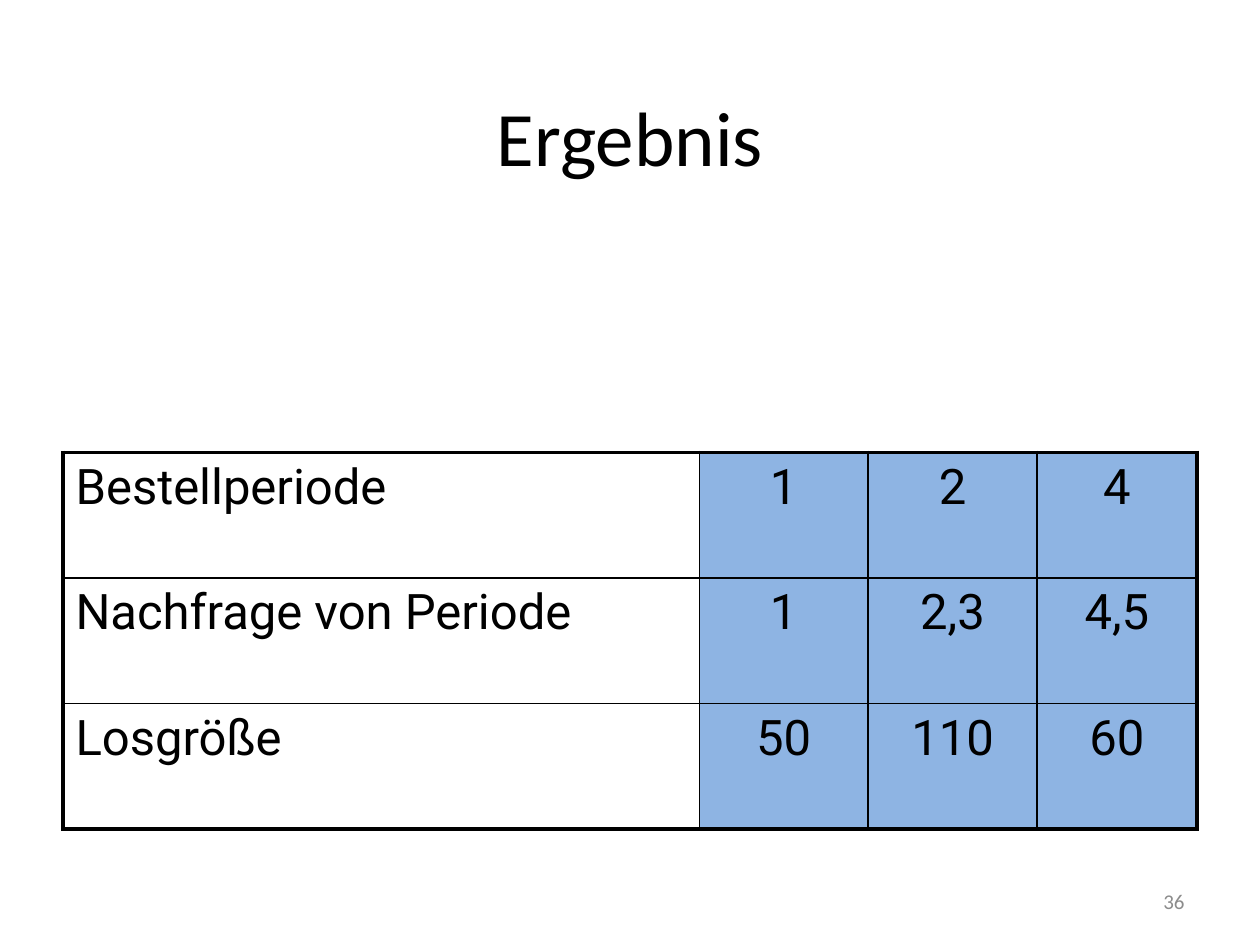
import pptx
import pptx.util
import pptx.dml.color
import pptx.enum.text
import pptx.oxml
import pptx.oxml.ns

Inches, Pt = pptx.util.Inches, pptx.util.Pt
ALIGN = pptx.enum.text.PP_ALIGN
ANCHOR = pptx.enum.text.MSO_ANCHOR

TITLE = "Ergebnis"
PAGE = "36"
ROWS = [
    ("Bestellperiode", "1", "2", "4"),
    ("Nachfrage von Periode", "1", "2,3", "4,5"),
    ("Losgröße", "50", "110", "60"),
]
COL_WIDTHS = [5.05, 1.34, 1.34, 1.27]
WIDTH, HEIGHT, MARGIN = 10, 7.5, 0.5
TABLE_TOP, TABLE_HEIGHT = 3.59, 2.99
BLACK, WHITE, BLUE, GREY = "000000", "FFFFFF", "8EB4E3", "8C8C8C"
OUTER, INNER = 2.25, 1


def rgb(value):
    return pptx.dml.color.RGBColor.from_string(value)


def write(tf, text, size, font, color, align):
    p = tf.paragraphs[0]
    p.alignment = align
    r = p.add_run()
    r.text = text
    r.font.size = Pt(size)
    r.font.name = font
    r.font.color.rgb = rgb(color)


def add_text(s, box, text, size, color, align):
    tf = s.shapes.add_textbox(*map(Inches, box)).text_frame
    tf.word_wrap = True
    tf.vertical_anchor = ANCHOR.MIDDLE
    write(tf, text, size, "Calibri", color, align)


def add_border(cell, side, width):
    cell._tc.get_or_add_tcPr().append(pptx.oxml.parse_xml(
        f'<a:ln{side} {pptx.oxml.ns.nsdecls("a")} w="{Pt(width)}">'
        f'<a:solidFill><a:srgbClr val="{BLACK}"/></a:solidFill></a:ln{side}>'))


def add_grid(s):
    last_row, last_col = len(ROWS) - 1, len(COL_WIDTHS) - 1
    box = (MARGIN, TABLE_TOP, WIDTH - 2 * MARGIN, TABLE_HEIGHT)
    table = s.shapes.add_table(len(ROWS), len(COL_WIDTHS), *map(Inches, box)).table
    table.first_row = table.horz_banding = False
    for col, width in zip(table.columns, COL_WIDTHS):
        col.width = Inches(width)
    for i, row in enumerate(ROWS):
        for j, text in enumerate(row):
            cell = table.cell(i, j)
            edges = {"L": j == 0, "R": j == last_col, "T": i == 0, "B": i == last_row}
            for side, outer in edges.items():
                add_border(cell, side, OUTER if outer else INNER)
            cell.fill.solid()
            cell.fill.fore_color.rgb = rgb(BLUE if j else WHITE)
            write(cell.text_frame, text, 28, "Roboto", BLACK,
                  ALIGN.CENTER if j else ALIGN.LEFT)


def main():
    prs = pptx.Presentation()
    prs.slide_width, prs.slide_height = Inches(WIDTH), Inches(HEIGHT)
    s = prs.slides.add_slide(prs.slide_layouts[6])
    add_text(s, (MARGIN, 0.32, WIDTH - 2 * MARGIN, 1.51), TITLE, 44, BLACK, ALIGN.CENTER)
    add_grid(s)
    add_text(s, (7.17, 6.95, 2.33, 0.4), PAGE, 12, GREY, ALIGN.RIGHT)
    prs.save("out.pptx")


if __name__ == "__main__":
    main()
